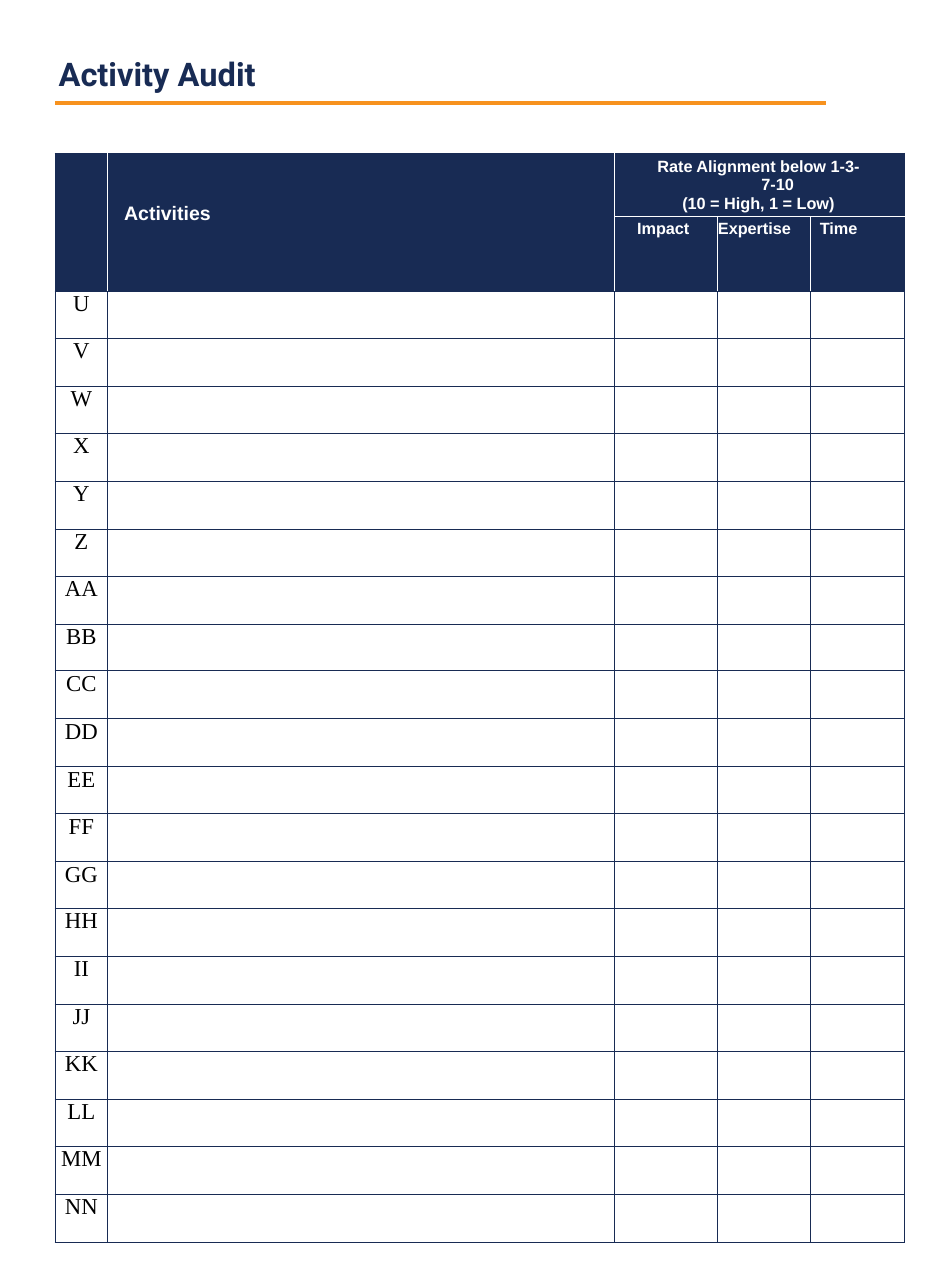
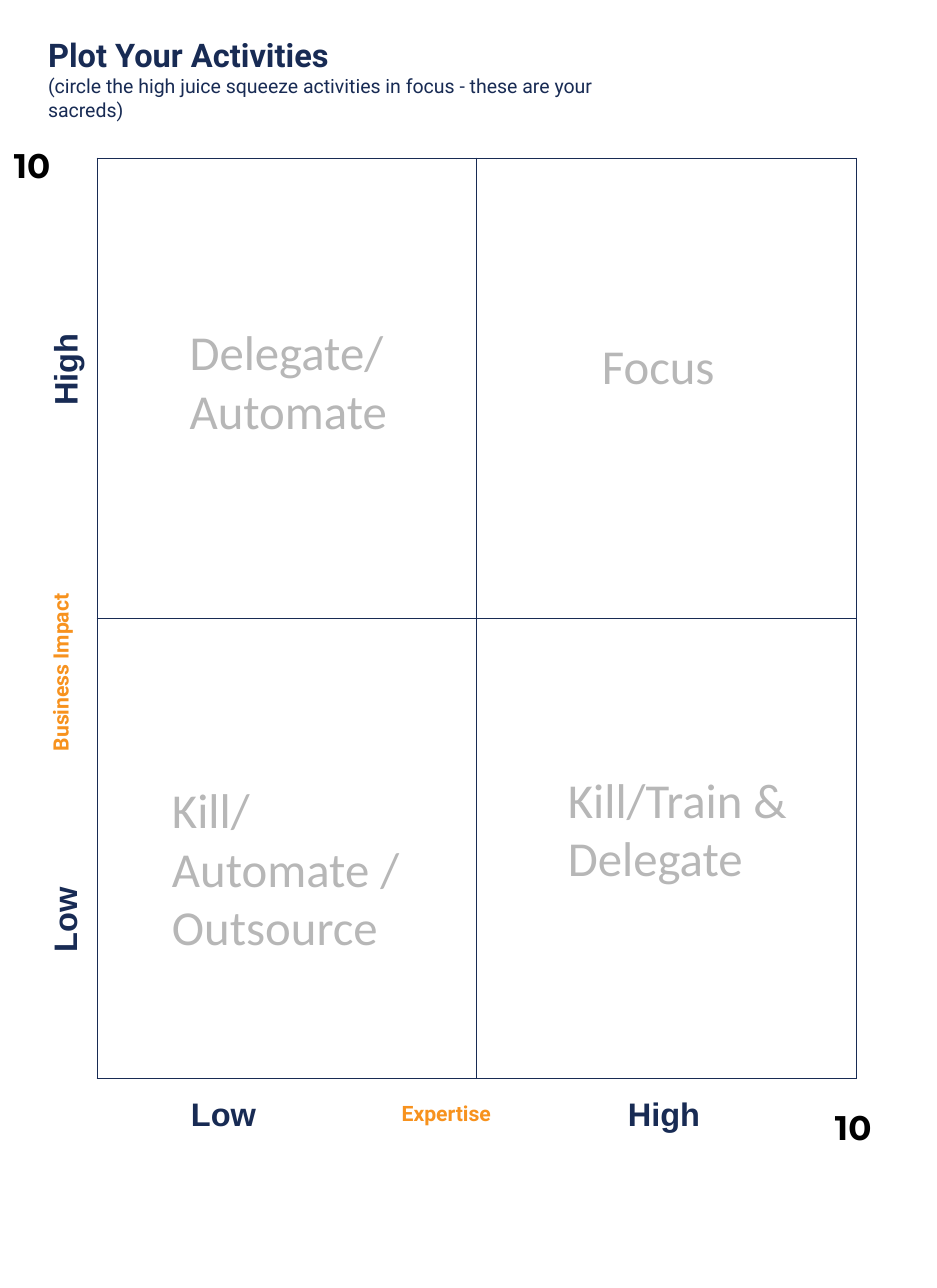
from dataclasses import dataclass

from lxml import etree
from pptx import Presentation
from pptx.dml.color import RGBColor
from pptx.enum.shapes import MSO_CONNECTOR
from pptx.enum.text import PP_ALIGN
from pptx.oxml.ns import qn
from pptx.util import Emu, Pt

EMU_PER_PX = 9144  # 100 px to the inch
CENTER = PP_ALIGN.CENTER
STRAIGHT = MSO_CONNECTOR.STRAIGHT

COLORS = {
    "navy": "182B54",
    "orange": "F7921E",
    "white": "FFFFFF",
    "grey": "B7B7B7",
    "black": "000000",
}


@dataclass(frozen=True)
class Style:
    name: str
    size: int
    color: str
    bold: bool = True


TITLE = Style("Roboto", 20, "navy")
SUBTITLE = Style("Roboto", 12, "navy", False)
LEVEL = Style("Arial", 20, "navy")
AXIS = Style("Roboto", 13, "orange")
QUADRANT = Style("Calibri", 30, "grey", False)
SCALE_END = Style("Montserrat", 21, "black")
HEAD = Style("Arial", 12, "white")
SUBHEAD = Style("Arial", 10, "white")
ROW_LABEL = Style("Times New Roman", 14, "black", False)


@dataclass(frozen=True)
class Label:
    """A text box; inset is left, top, right, bottom."""
    box: tuple[int, int, int, int]
    lines: tuple[str, ...]
    style: Style
    rotation: int = 0
    inset: tuple[int, int, int, int] = (1, 1, 0, 0)


@dataclass(frozen=True)
class HeadCell:
    row: int
    col: int
    end: tuple[int, int]
    lines: tuple[str, ...] = ()
    style: Style = SUBHEAD
    left: int = 0
    top: int = 0
    hanging: bool = False


HEAD_CELLS = [
    HeadCell(0, 0, (1, 0)),
    HeadCell(0, 1, (1, 1), ("Activities",), HEAD, 14, 42),
    HeadCell(0, 2, (0, 4), ("Rate Alignment below 1-3-7-10", "(10 = High, 1 = Low)"),
             top=4, hanging=True),
    HeadCell(1, 2, (1, 2), ("Impact",), left=19, top=3),
    HeadCell(1, 3, (1, 3), ("Expertise",), top=3),
    HeadCell(1, 4, (1, 4), ("Time",), left=8, top=3),
]
ROW_LABELS = "U V W X Y Z AA BB CC DD EE FF GG HH II JJ KK LL MM NN".split()
AUDIT_COLS = [45, 433, 88, 79, 80]
HEAD_ROWS = [53, 64]
BODY_HEIGHT = 812

PADDED = (10, 10, 10, 10)
PLOT_LABELS = [
    Label((5, 281, 97, 36), ("High",), LEVEL, 270, (1, 3, 0, 0)),
    Label((21, 764, 64, 36), ("Low",), LEVEL, 270, (1, 3, 0, 0)),
    Label((162, 933, 92, 35), ("Low",), LEVEL),
    Label((535, 933, 101, 35), ("High",), LEVEL),
    Label((-121, 459, 345, 22), ("Business Impact",), AXIS, 270, (1, 0, 0, 0)),
    Label((342, 939, 132, 23), ("Expertise",), AXIS),
    Label((137, 656, 221, 159), ("Kill/ Automate /", "Outsource"), QUADRANT, inset=PADDED),
    Label((152, 265, 221, 159), ("Delegate/ Automate",), QUADRANT, inset=PADDED),
    Label((475, 647, 221, 159), ("Kill/Train & Delegate",), QUADRANT, inset=PADDED),
    Label((504, 277, 221, 159), ("Focus",), QUADRANT, inset=PADDED),
    Label((2, 113, 58, 94), ("10",), SCALE_END, inset=PADDED),
    Label((703, 935, 58, 94), ("10",), SCALE_END, inset=PADDED),
]


def px(n: int) -> Emu:
    return Emu(n * EMU_PER_PX)


def rgb(color: str) -> RGBColor:
    return RGBColor.from_string(COLORS[color])


def split(total: int, n: int) -> list[int]:
    """Cut a length into n whole-pixel parts that add up to it."""
    return [total * (i + 1) // n - total * i // n for i in range(n)]


def set_margins(target, inset) -> None:
    for side, n in zip(("left", "top", "right", "bottom"), inset):
        setattr(target, f"margin_{side}", px(n))


def write(tf, lines, style: Style, align=None) -> None:
    for i, text in enumerate(lines):
        p = tf.paragraphs[0] if i == 0 and not tf.text else tf.add_paragraph()
        p.alignment = align
        r = p.add_run()
        r.text = text
        for key, value in {"name": style.name, "size": Pt(style.size), "bold": style.bold}.items():
            setattr(r.font, key, value)
        r.font.color.rgb = rgb(style.color)


def add_label(slide, label: Label):
    sp = slide.shapes.add_textbox(*map(px, label.box))
    sp.rotation = label.rotation
    tf = sp.text_frame
    tf.word_wrap = True
    set_margins(tf, label.inset)
    write(tf, label.lines, label.style)
    return tf


def add_rule(slide, x1: int, x2: int, y: int) -> None:
    line = slide.shapes.add_connector(STRAIGHT, px(x1), px(y), px(x2), px(y))
    line.line.color.rgb = rgb("orange")
    line.line.width = Pt(3)
    etree.SubElement(line._element.spPr, qn("a:effectLst"))


def set_borders(cell, white: str = "") -> None:
    """Draw all four borders in navy, except the sides named in white."""
    tc_pr = cell._tc.get_or_add_tcPr()
    for side in "LRTB":
        ln = etree.SubElement(tc_pr, qn(f"a:ln{side}"), w=str(Pt(0.75)))
        fill = etree.SubElement(ln, qn("a:solidFill"))
        color = COLORS["white" if side in white else "navy"]
        etree.SubElement(fill, qn("a:srgbClr"), val=color)


def add_grid(slide, left: int, top: int, cols: list[int], rows: list[int]):
    """Add a plain table with no style bands and no cell margins."""
    frame = slide.shapes.add_table(len(rows), len(cols), px(left), px(top),
                                   px(sum(cols)), px(sum(rows)))
    table = frame.table
    table.first_row = table.horz_banding = False
    for column, width in zip(table.columns, cols):
        column.width = px(width)
    for row, height in zip(table.rows, rows):
        row.height = px(height)
    for cell in table.iter_cells():
        set_margins(cell, (0, 0, 0, 0))
        cell.fill.background()
    return table


def add_head_cell(table, head: HeadCell) -> None:
    cell = table.cell(head.row, head.col)
    if head.end != (head.row, head.col):
        cell.merge(table.cell(*head.end))
    tc_pr = cell._tc.get_or_add_tcPr()
    for child in list(tc_pr):
        tc_pr.remove(child)
    last_row, last_col = head.end
    white = "L" if head.col > 0 else ""
    white += "R" if last_col < len(AUDIT_COLS) - 1 else ""
    white += "T" if head.row > 0 else ""
    white += "B" if last_row == 0 else ""
    set_borders(cell, white)
    cell.fill.solid()
    cell.fill.fore_color.rgb = rgb("navy")
    set_margins(cell, (head.left, head.top, 0, 0))
    write(cell.text_frame, head.lines, head.style, CENTER if head.hanging else None)
    if head.hanging:
        for p in cell.text_frame.paragraphs:
            for key, n in {"marL": 65, "marR": 34, "indent": -33}.items():
                p._p.get_or_add_pPr().set(key, str(px(n)))


def add_body_cell(cell, text: str = "") -> None:
    tc_pr = cell._tc.get_or_add_tcPr()
    for child in list(tc_pr):
        tc_pr.remove(child)
    set_borders(cell)
    cell.fill.background()
    if text:
        write(cell.text_frame, (text,), ROW_LABEL, CENTER)


def build_audit(slide) -> None:
    add_rule(slide, 47, 705, 88)
    add_label(slide, Label((49, 45, 499, 35), ("Activity Audit",), TITLE))
    rows = HEAD_ROWS + split(BODY_HEIGHT, len(ROW_LABELS))
    table = add_grid(slide, 47, 131, AUDIT_COLS, rows)
    for head in HEAD_CELLS:
        add_head_cell(table, head)
    for i, label in enumerate(ROW_LABELS, len(HEAD_ROWS)):
        for j in range(len(AUDIT_COLS)):
            add_body_cell(table.cell(i, j), label if j == 0 else "")


def build_plot(slide) -> None:
    table = add_grid(slide, 83, 135, [324] * 2, [393] * 2)
    for cell in table.iter_cells():
        add_body_cell(cell)
    tf = add_label(slide, Label((40, 29, 499, 75), ("Plot Your Activities",), TITLE))
    write(tf, ("(circle the high juice squeeze activities in focus - these are your sacreds)",),
          SUBTITLE)
    for label in PLOT_LABELS:
        add_label(slide, label)


def main() -> None:
    prs = Presentation()
    prs.slide_width, prs.slide_height = px(800), px(1100)
    blank = prs.slide_layouts[6]
    for build in (build_audit, build_plot):
        build(prs.slides.add_slide(blank))
    prs.save("out.pptx")


if __name__ == "__main__":
    main()
